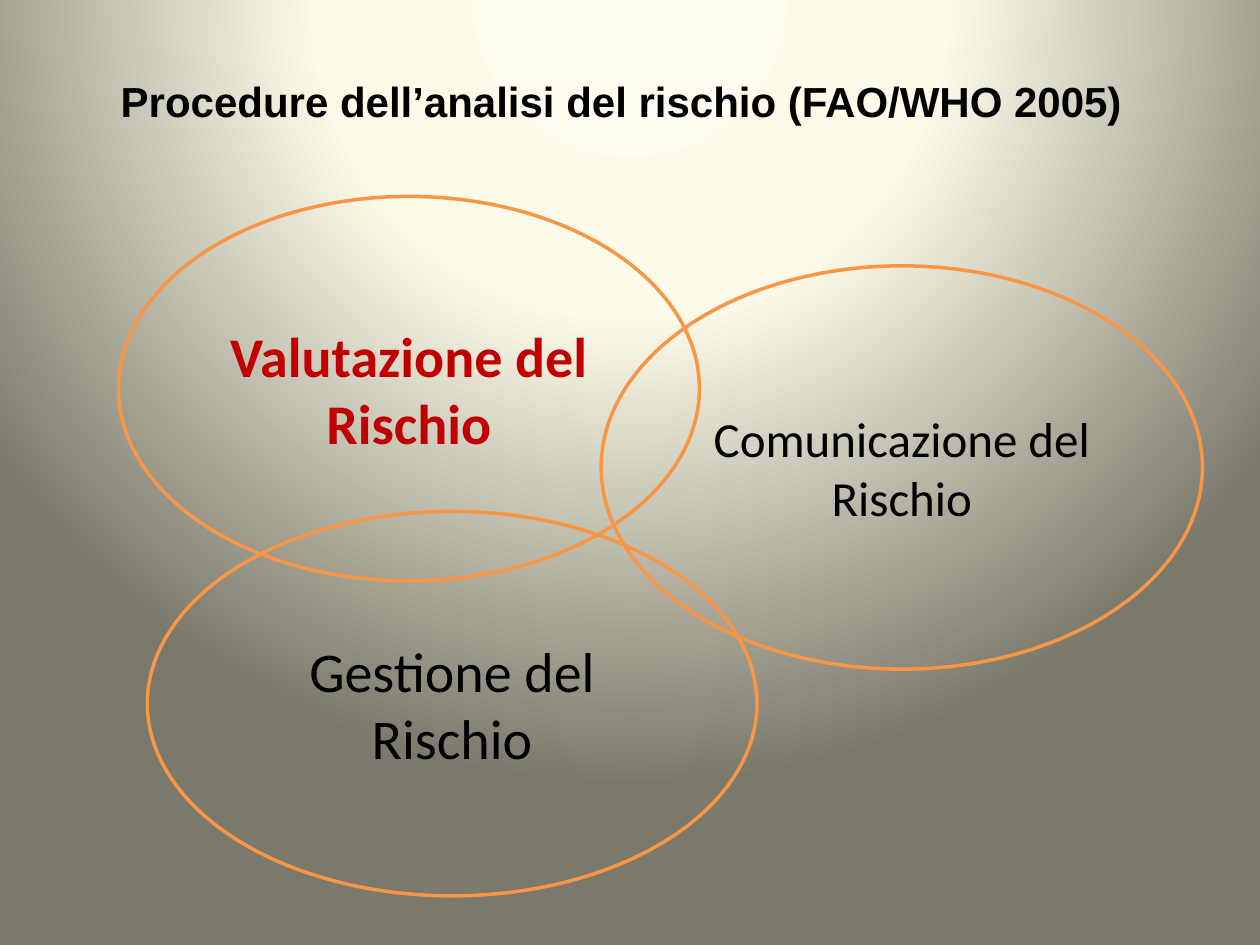
from lxml import etree
from pptx import Presentation
from pptx.dml.color import RGBColor
from pptx.enum.shapes import MSO_SHAPE
from pptx.enum.text import MSO_ANCHOR, MSO_AUTO_SIZE, PP_ALIGN
from pptx.oxml import parse_xml
from pptx.oxml.ns import nsdecls, qn
from pptx.util import Cm, Pt

OVAL = MSO_SHAPE.OVAL
MIDDLE, TOP = MSO_ANCHOR.MIDDLE, MSO_ANCHOR.TOP
CENTER, LEFT = PP_ALIGN.CENTER, PP_ALIGN.LEFT
BLACK, RED, ORANGE = "000000", "C00000", "F79646"

TITLE = "Procedure dell’analisi del rischio (FAO/WHO 2005)"
TITLE_BOX = (2.18, 1.4, 21.08, 1.27)
# text, (left, top, width, height) in cm, size, colour, bold
OVALS = [
    ("Comunicazione del Rischio", (12.12, 5.36, 12.12, 8.13), 28, BLACK, False),
    ("Gestione del Rischio", (2.97, 10.31, 12.29, 7.75), 32, BLACK, False),
    ("Valutazione del Rischio", (2.39, 3.96, 11.71, 7.75), 32, RED, True),
]
BACKGROUND_STOPS = [(0, "FEFCEE"), (40, "FDFAEA"), (100, "7B796B")]


def rgb(color):
    return RGBColor.from_string(color)


def set_background(s, stops):
    """Radial gradient centred above the top edge of the slide."""
    s.background.fill.solid()
    bg = s.element.find(".//" + qn("p:bgPr"))
    grad = parse_xml(
        f'<a:gradFill {nsdecls("a")} rotWithShape="1"><a:gsLst/>'
        '<a:path path="circle">'
        '<a:fillToRect l="50000" t="-80000" r="50000" b="180000"/>'
        "</a:path></a:gradFill>")
    for pos, color in stops:
        gs = etree.SubElement(grad[0], qn("a:gs"), pos=str(pos * 1000))
        etree.SubElement(gs, qn("a:srgbClr"), val=color)
    bg.replace(bg.find(qn("a:solidFill")), grad)


def write(tf, text, font, size, color, bold, align, anchor):
    tf.vertical_anchor = anchor
    p = tf.paragraphs[0]
    p.alignment = align
    r = p.add_run()
    r.text = text
    r.font.name, r.font.size, r.font.bold = font, Pt(size), bold
    r.font.color.rgb = rgb(color)


def add_oval(s, text, box, size, color, bold):
    sp = s.shapes.add_shape(OVAL, *map(Cm, box))
    sp.shadow.inherit = False
    sp.fill.background()
    sp.line.color.rgb = rgb(ORANGE)
    sp.line.width = Pt(2)
    sp.text_frame.word_wrap = True
    write(sp.text_frame, text, "Calibri", size, color, bold, CENTER, MIDDLE)


def main():
    prs = Presentation()
    prs.slide_width, prs.slide_height = Cm(25.4), Cm(19.05)
    s = prs.slides.add_slide(prs.slide_layouts[5])
    set_background(s, BACKGROUND_STOPS)

    for oval in OVALS:
        add_oval(s, *oval)

    title = s.shapes.title
    title.left, title.top, title.width, title.height = map(Cm, TITLE_BOX)
    tf = title.text_frame
    tf.word_wrap = False
    tf.auto_size = MSO_AUTO_SIZE.SHAPE_TO_FIT_TEXT
    write(tf, TITLE, "Arial", 24, BLACK, True, LEFT, TOP)

    prs.save("out.pptx")


if __name__ == "__main__":
    main()
